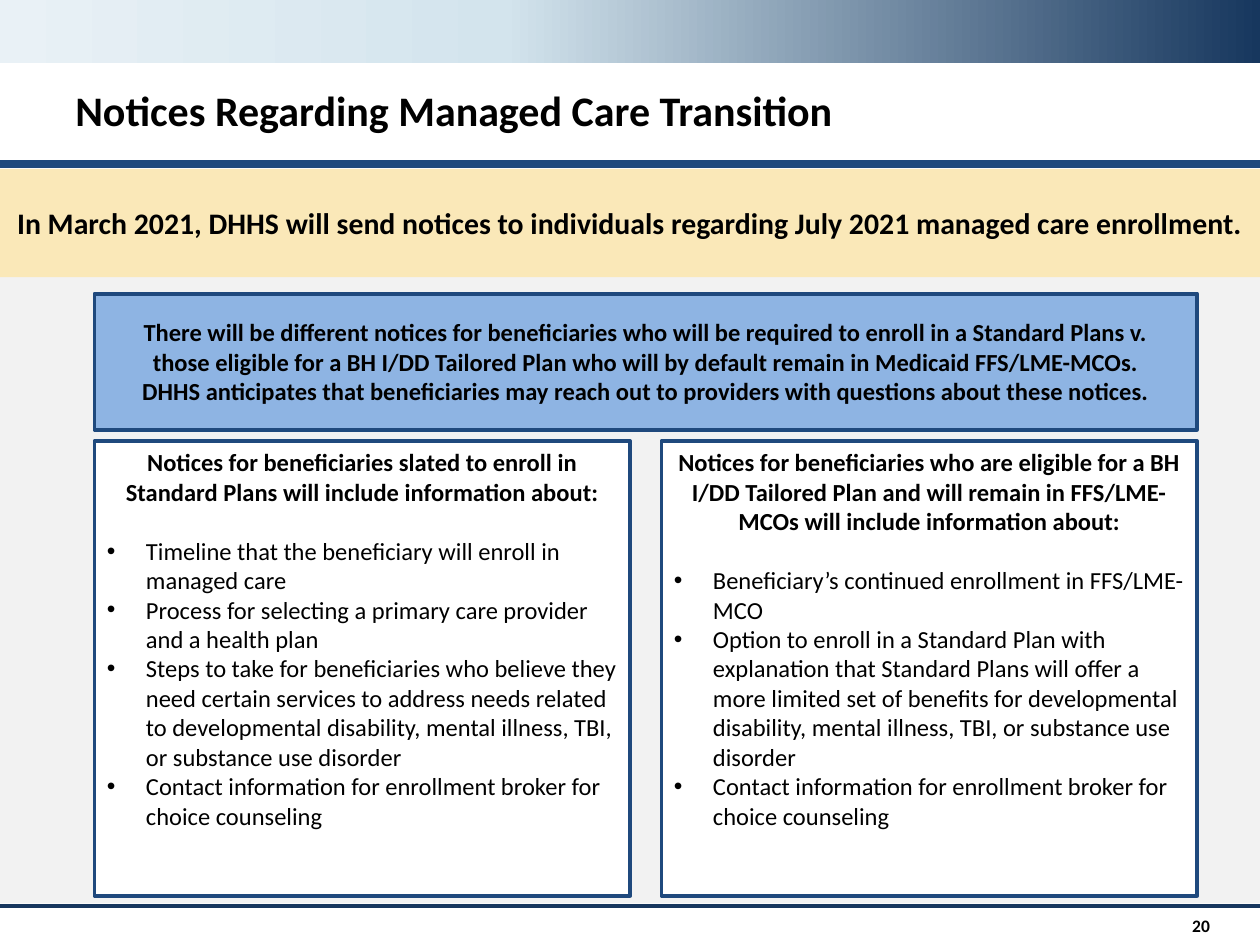
from copy import deepcopy

from lxml import etree
from pptx import Presentation
from pptx import util as u
from pptx.dml.color import RGBColor
from pptx.enum import shapes, text
from pptx.oxml.ns import qn

BLACK = RGBColor(0x00, 0x00, 0x00)
WHITE = RGBColor(0xFF, 0xFF, 0xFF)
NAVY = RGBColor(0x17, 0x37, 0x5E)
INDIGO = RGBColor(0x00, 0x20, 0x60)
BLUE = RGBColor(0x1F, 0x49, 0x7D)
SKY = RGBColor(0x8E, 0xB4, 0xE3)
MIST = RGBColor(0xD3, 0xE4, 0xED)
ICE = RGBColor(0xE9, 0xF1, 0xF6)
SAND = RGBColor(0xFA, 0xE8, 0xB8)
GREY = RGBColor(0xF2, 0xF2, 0xF2)

LEFT, CENTER, RIGHT = text.PP_ALIGN.LEFT, text.PP_ALIGN.CENTER, text.PP_ALIGN.RIGHT
TOP, MIDDLE = text.MSO_ANCHOR.TOP, text.MSO_ANCHOR.MIDDLE


class NoticeSlide:
    """Draws the elements of the notice slide in one shared style."""

    font = "Calibri"
    body_size = 14
    bullet_indent = 0.31

    def __init__(self, slide):
        self.slide = slide

    def box(self, left, top, width, height, fill=None, outline=None):
        panel = self.slide.shapes.add_shape(
            shapes.MSO_SHAPE.RECTANGLE, *map(u.Inches, (left, top, width, height)))
        panel.shadow.inherit = False
        if fill is not None:
            panel.fill.solid()
            panel.fill.fore_color.rgb = fill
        if outline is None:
            panel.line.fill.background()
        else:
            panel.line.color.rgb = outline
            panel.line.width = u.Pt(2.25)
        return panel

    def gradient_band(self, left, top, width, height, stops):
        band = self.box(left, top, width, height)
        band.fill.gradient()
        band.fill.gradient_angle = 180
        stop_list = next(band._element.iter(qn("a:gsLst")))
        for _ in stops[2:]:
            stop_list.append(deepcopy(stop_list[0]))
        for stop, (position, color) in zip(band.fill.gradient_stops, stops):
            stop.position = position
            stop.color.rgb = color

    def rule(self, y, color, weight):
        line = self.slide.shapes.add_connector(
            shapes.MSO_CONNECTOR.STRAIGHT, 0, u.Inches(y), u.Inches(10), u.Inches(y))
        line.line.color.rgb = color
        line.line.width = u.Pt(weight)
        etree.SubElement(line._element.spPr, qn("a:effectLst"))

    def label(self, left, top, width, height, wording, size, align=LEFT, anchor=TOP):
        holder = self.slide.shapes.add_textbox(*map(u.Inches, (left, top, width, height)))
        frame = self.frame(holder, anchor)
        return self.add_words(frame.paragraphs[0], wording, size, align)

    def banner(self, left, top, width, height, wording, size, fill, side, outline=None):
        panel = self.box(left, top, width, height, fill, outline)
        frame = self.frame(panel, MIDDLE, side, 0.06)
        self.add_words(frame.paragraphs[0], wording, size, CENTER)

    def notice_card(self, left, top, width, height, heading, topics):
        frame = self.frame(self.box(left, top, width, height, WHITE, BLUE), TOP)
        title = self.add_words(frame.paragraphs[0], heading, self.body_size, CENTER)
        title.space_after = u.Pt(17)
        for topic in topics:
            self.bullet(self.add_words(
                frame.add_paragraph(), topic, self.body_size, LEFT, False))

    def frame(self, holder, anchor, side=0.1, edge=0.05):
        frame = holder.text_frame
        frame.word_wrap = True
        frame.vertical_anchor = anchor
        frame.margin_left = frame.margin_right = u.Inches(side)
        frame.margin_top = frame.margin_bottom = u.Inches(edge)
        return frame

    def add_words(self, paragraph, wording, size, align, bold=True):
        paragraph.alignment = align
        run = paragraph.add_run()
        run.text = wording
        run.font.name = self.font
        run.font.size = u.Pt(size)
        run.font.bold = bold
        run.font.color.rgb = BLACK
        return paragraph

    def bullet(self, paragraph):
        properties = paragraph._p.get_or_add_pPr()
        indent = u.Inches(self.bullet_indent)
        properties.set("marL", str(indent))
        properties.set("indent", str(-indent))
        etree.SubElement(properties, qn("a:buFont"), typeface="Arial")
        etree.SubElement(properties, qn("a:buChar"), char="•")


def main():
    deck = Presentation()
    deck.slide_width, deck.slide_height = u.Inches(10), u.Inches(7.5)
    page = NoticeSlide(deck.slides.add_slide(deck.slide_layouts[6]))

    page.gradient_band(0, 0, 10, 0.5, [(0, NAVY), (0.6, MIST), (1, ICE)])
    page.rule(1.29, INDIGO, 2)
    page.rule(7.19, NAVY, 2.25)
    title = page.label(0.5, 0.67, 9, 0.6, "Notices Regarding Managed Care Transition", 24)
    title.line_spacing = 0.9
    page.rule(1.3, BLUE, 4.5)
    page.box(0, 1.34, 10, 5.83, GREY)
    page.label(9.08, 7.19, 0.62, 0.31, "20", 10, RIGHT, MIDDLE)
    page.banner(
        0, 1.34, 10, 0.86,
        "In March 2021, DHHS will send notices to individuals regarding "
        "July 2021 managed care enrollment.",
        17, SAND, 0.11)

    broker = "Contact information for enrollment broker for choice counseling"
    notices = [
        ("Notices for beneficiaries slated to enroll in Standard Plans "
         "will include information about:",
         ["Timeline that the beneficiary will enroll in managed care",
          "Process for selecting a primary care provider and a health plan",
          "Steps to take for beneficiaries who believe they need certain services to "
          "address needs related to developmental disability, mental illness, TBI, "
          "or substance use disorder",
          broker]),
        ("Notices for beneficiaries who are eligible for a BH I/DD Tailored Plan "
         "and will remain in FFS/LME-MCOs will include information about:",
         ["Beneficiary’s continued enrollment in FFS/LME-MCO",
          "Option to enroll in a Standard Plan with explanation that Standard Plans "
          "will offer a more limited set of benefits for developmental disability, "
          "mental illness, TBI, or substance use disorder",
          broker]),
    ]
    margin, card_width, gap = 0.75, 4.25, 0.25
    for column, (heading, topics) in enumerate(notices):
        left = margin + column * (card_width + gap)
        page.notice_card(left, 3.5, card_width, 3.61, heading, topics)

    page.banner(
        margin, 2.33, 2 * card_width + gap, 1.08,
        "There will be different notices for beneficiaries who will be required to enroll "
        "in a Standard Plans v. those eligible for a BH I/DD Tailored Plan who will by "
        "default remain in Medicaid FFS/LME-MCOs. DHHS anticipates that beneficiaries may "
        "reach out to providers with questions about these notices.",
        14, SKY, 0.3, BLUE)

    deck.save("out.pptx")


if __name__ == "__main__":
    main()
